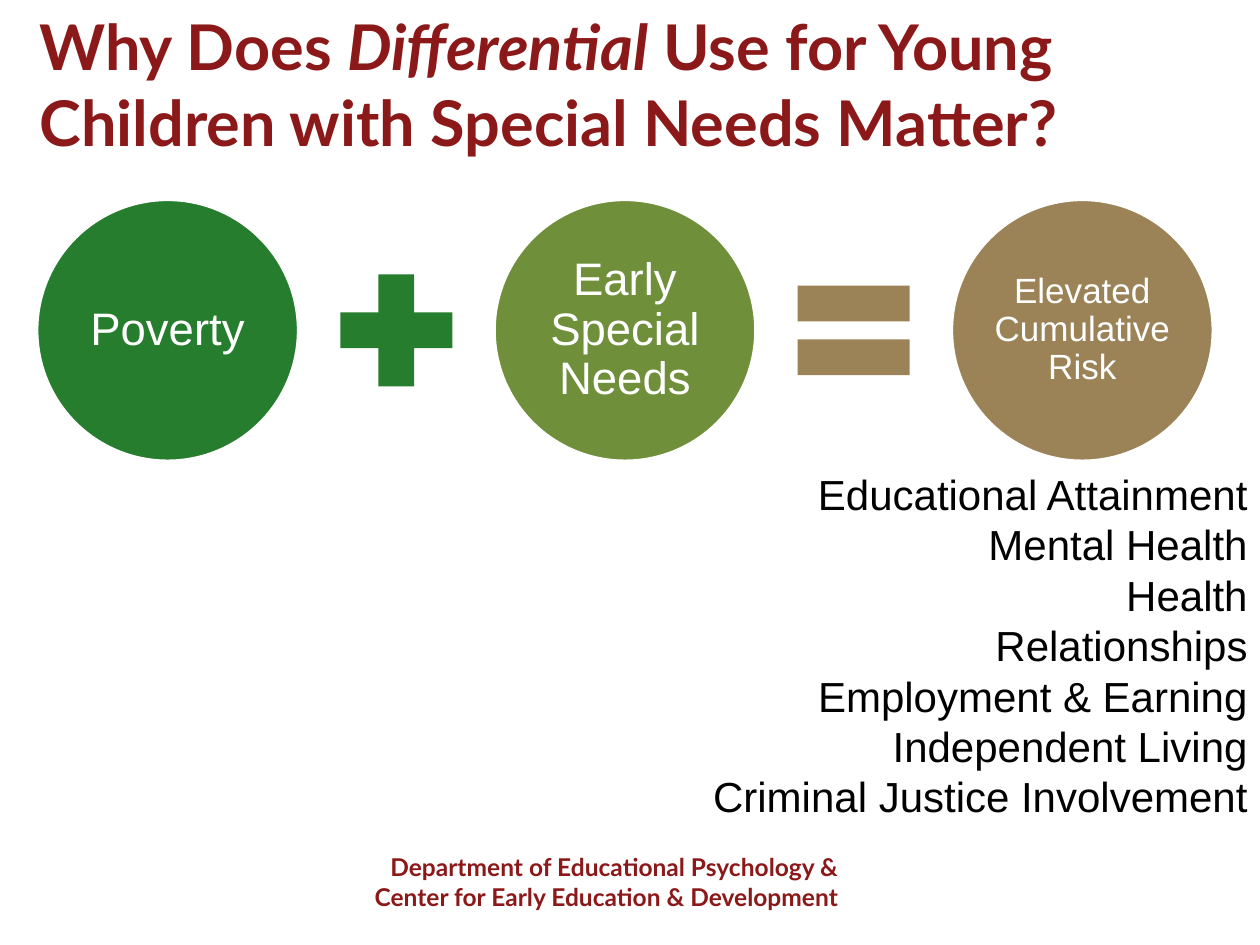
from pptx import Presentation, util as u
from pptx.dml.color import RGBColor
from pptx.enum import shapes, text

MAROON = RGBColor(0x8C, 0x19, 0x19)
GREEN = RGBColor(0x25, 0x7D, 0x2D)
OLIVE = RGBColor(0x70, 0x8F, 0x3B)
TAN = RGBColor(0x9B, 0x83, 0x57)
WHITE = RGBColor(0xFF, 0xFF, 0xFF)
BLACK = RGBColor(0, 0, 0)

KIND = shapes.MSO_SHAPE
ALIGN = text.PP_ALIGN
MIDDLE = text.MSO_ANCHOR.MIDDLE

# Each line is a list of (words, italic) runs.
TITLE = [[("Why Does ", False), ("Differential", True),
          (" Use for Young Children with Special Needs Matter?", False)]]
TERMS = [("Poverty", 26, GREEN), ("Early Special Needs", 26, OLIVE),
         ("Elevated Cumulative Risk", 20, TAN)]
SIGNS = [(KIND.MATH_PLUS, GREEN), (KIND.MATH_EQUAL, TAN)]
RISKS = ["Educational Attainment", "Mental Health", "Health", "Relationships",
         "Employment & Earning", "Independent Living",
         "Criminal Justice Involvement"]
FOOTER = ["Department of Educational Psychology &",
          "Center for Early Education & Development"]

# Lengths in centimetres
LEFT, MID, STEP = 0.74, 6.66, 9.22
DISC, SIGN = 5.28, 3.07

deck = Presentation()
deck.slide_width, deck.slide_height = u.Cm(25.4), u.Cm(19.05)
slide = deck.slides.add_slide(deck.slide_layouts[6])


def write(frame, lines, size, color, font="Arial", bold=False,
          align=ALIGN.LEFT, anchor=text.MSO_ANCHOR.TOP, space=None):
    """Fill a frame; a line is a string or a list of (words, italic) runs."""
    frame.word_wrap = True
    frame.vertical_anchor = anchor
    for i, line in enumerate(lines):
        para = frame.paragraphs[0] if i == 0 else frame.add_paragraph()
        para.alignment = align
        if space:
            para.line_spacing = space
        for words, italic in [(line, False)] if isinstance(line, str) else line:
            run = para.add_run()
            run.text = words
            run.font.name, run.font.size = font, u.Pt(size)
            run.font.bold, run.font.italic = bold, italic
            run.font.color.rgb = color


def box(x, y, w, h, lines, size, color, **style):
    area = slide.shapes.add_textbox(u.Cm(x), u.Cm(y), u.Cm(w), u.Cm(h))
    write(area.text_frame, lines, size, color, **style)


def draw(kind, center, size, color):
    """Add a square-sized shape centred on the equation row."""
    shape = slide.shapes.add_shape(
        kind, u.Cm(center - size / 2), u.Cm(MID - size / 2),
        u.Cm(size), u.Cm(size))
    shape.shadow.inherit = False
    shape.fill.solid()
    shape.fill.fore_color.rgb = color
    shape.line.fill.background()
    return shape


box(4.45, 17.06, 12.7, 1.45, FOOTER, 14, MAROON,
    font="Lato", bold=True, align=ALIGN.RIGHT)
box(0.55, 0.63, 24.13, 2.11, TITLE, 36, MAROON,
    font="Lato", bold=True, anchor=MIDDLE)

first = LEFT + DISC / 2
for i, (label, size, color) in enumerate(TERMS):
    disc = draw(KIND.OVAL, first + i * STEP, DISC, color)
    disc.line.color.rgb = WHITE
    disc.line.width = u.Pt(2)
    frame = disc.text_frame
    # The longest word needs the full width inside the disc.
    frame.margin_left = frame.margin_right = 0
    frame.margin_top = frame.margin_bottom = 0
    write(frame, [label], size, WHITE, align=ALIGN.CENTER,
          anchor=MIDDLE, space=0.9)

for i, (kind, color) in enumerate(SIGNS):
    draw(kind, first + (i + 0.5) * STEP, SIGN, color)

box(13.77, 9.32, 11.63, 7.44, RISKS, 24, BLACK,
    align=ALIGN.RIGHT, space=u.Pt(28.8))

deck.save("out.pptx")
